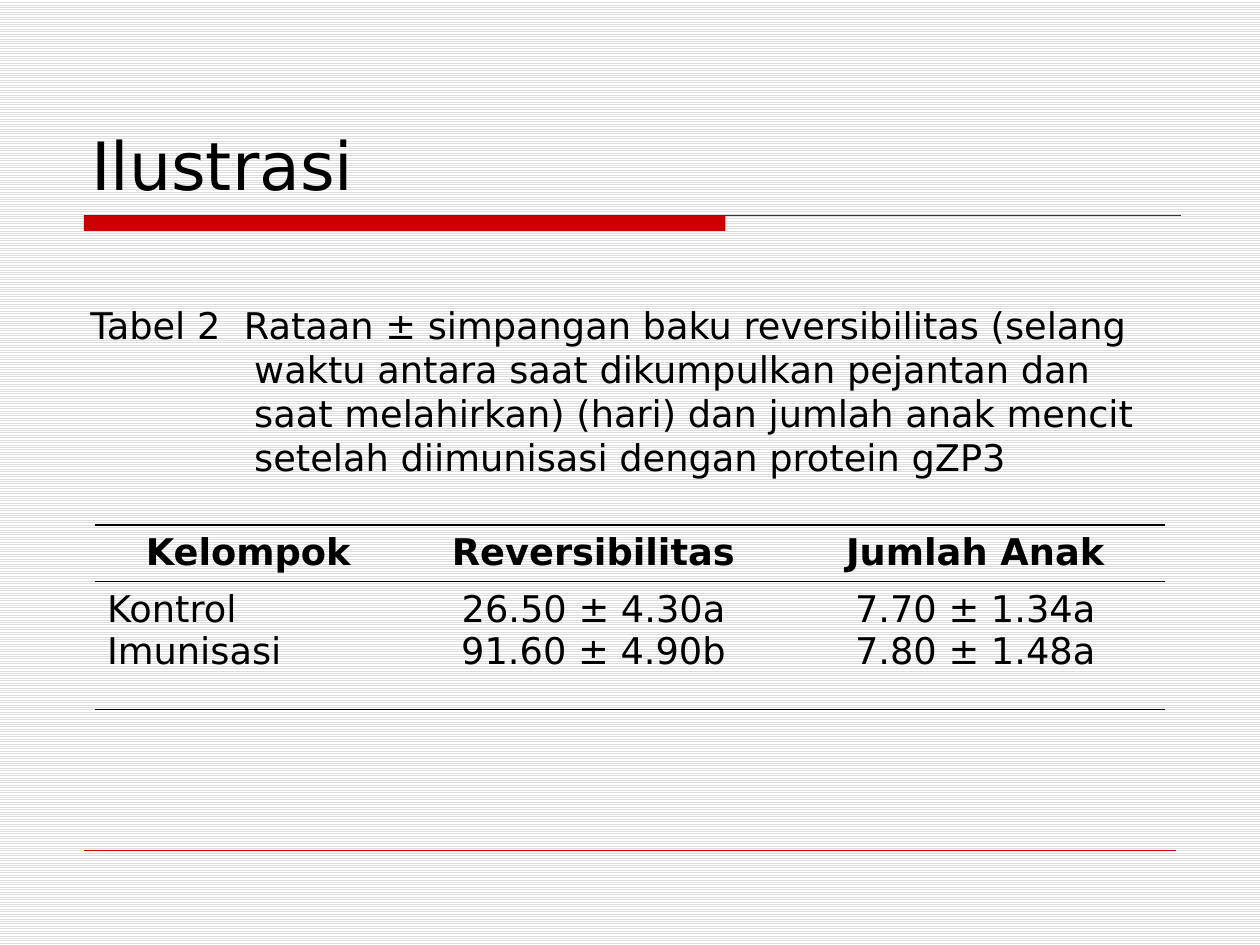
import pptx
import pptx.util
import pptx.dml.color
import pptx.enum.dml
import pptx.enum.shapes
import pptx.enum.text
import pptx.oxml
import pptx.oxml.ns
import lxml.etree

Pt = pptx.util.Pt
RGBColor = pptx.dml.color.RGBColor
ALIGN = pptx.enum.text.PP_ALIGN
ANCHOR = pptx.enum.text.MSO_ANCHOR
qn = pptx.oxml.ns.qn

BLACK = RGBColor(0x00, 0x00, 0x00)
WHITE = RGBColor(0xFF, 0xFF, 0xFF)
GREY = RGBColor(0xDD, 0xDD, 0xDD)
DARK = RGBColor(0x33, 0x33, 0x33)
RED = RGBColor(0xCC, 0x00, 0x00)


def write(frame, text, size=21, bold=False, align=ALIGN.LEFT, anchor=ANCHOR.TOP, hanging=0):
    frame.word_wrap = True
    frame.vertical_anchor = anchor
    for index, line in enumerate(text.split("\n")):
        para = frame.add_paragraph() if index else frame.paragraphs[0]
        para.alignment = align
        if hanging:
            properties = para._p.get_or_add_pPr()
            properties.set("marL", str(Pt(hanging)))
            properties.set("indent", str(-Pt(hanging)))
        span = para.add_run()
        span.text = line
        span.font.name = "DejaVu Sans"
        span.font.size = Pt(size)
        span.font.bold = bold
        span.font.color.rgb = BLACK


def set_border(cell, side, width):
    border = lxml.etree.Element(qn("a:" + side), w=str(Pt(width)))
    if width:
        fill = lxml.etree.SubElement(border, qn("a:solidFill"))
        lxml.etree.SubElement(fill, qn("a:srgbClr"), val=str(BLACK))
    else:
        lxml.etree.SubElement(border, qn("a:noFill"))
    cell._tc.get_or_add_tcPr().insert(0, border)


deck = pptx.Presentation()
deck.slide_width = Pt(720)
deck.slide_height = Pt(540)
page = deck.slides.add_slide(deck.slide_layouts[6])

backdrop = page.background.fill
backdrop.patterned()
backdrop.pattern = pptx.enum.dml.MSO_PATTERN.LIGHT_HORIZONTAL
backdrop.fore_color.rgb = GREY
backdrop.back_color.rgb = WHITE

bar = page.shapes.add_shape(
    pptx.enum.shapes.MSO_SHAPE.RECTANGLE, Pt(48), Pt(123), Pt(366.5), Pt(9))
bar.shadow.inherit = False
bar.fill.solid()
bar.fill.fore_color.rgb = RED
bar.line.fill.background()

for y, right, color, width in ((123, 675, DARK, 0.75), (486, 672, RED, 0.25)):
    rule = page.shapes.add_connector(
        pptx.enum.shapes.MSO_CONNECTOR.STRAIGHT, Pt(48), Pt(y), Pt(right), Pt(y))
    rule.line.color.rgb = color
    rule.line.width = Pt(width)
    lxml.etree.SubElement(rule._element.spPr, qn("a:effectLst"))

title = page.shapes.add_textbox(Pt(45), Pt(24), Pt(630), Pt(96))
write(title.text_frame, "Ilustrasi", size=38, anchor=ANCHOR.BOTTOM)

caption = page.shapes.add_textbox(Pt(44.6), Pt(169.5), Pt(627), Pt(112))
write(
    caption.text_frame,
    "Tabel 2  Rataan ± simpangan baku reversibilitas (selang waktu antara saat "
    "dikumpulkan pejantan dan saat melahirkan) (hari) dan jumlah anak mencit "
    "setelah diimunisasi dengan protein gZP3",
    hanging=93.6)

rows = (
    ("Kelompok", "Reversibilitas", "Jumlah Anak"),
    ("Kontrol\nImunisasi", "26.50 ± 4.30a\n91.60 ± 4.90b", "7.70 ± 1.34a\n7.80 ± 1.48a"),
)
table = page.shapes.add_table(2, 3, Pt(54), Pt(300), Pt(612), Pt(105)).table
table.first_row = False
table.horz_banding = False
for column, width in zip(table.columns, (175.7, 218.9, 217.4)):
    column.width = Pt(width)
for row, height in zip(table.rows, (32, 73)):
    row.height = Pt(height)

for i, texts in enumerate(rows):
    top, bottom = ((1, 0.5), (0.5, 1))[i]
    for j, text in enumerate(texts):
        cell = table.cell(i, j)
        cell.fill.background()
        for side, width in (("lnB", bottom), ("lnT", top), ("lnR", 0), ("lnL", 0)):
            set_border(cell, side, width)
        align = ALIGN.LEFT if i and not j else ALIGN.CENTER
        write(cell.text_frame, text, bold=not i, align=align)

deck.save("out.pptx")
